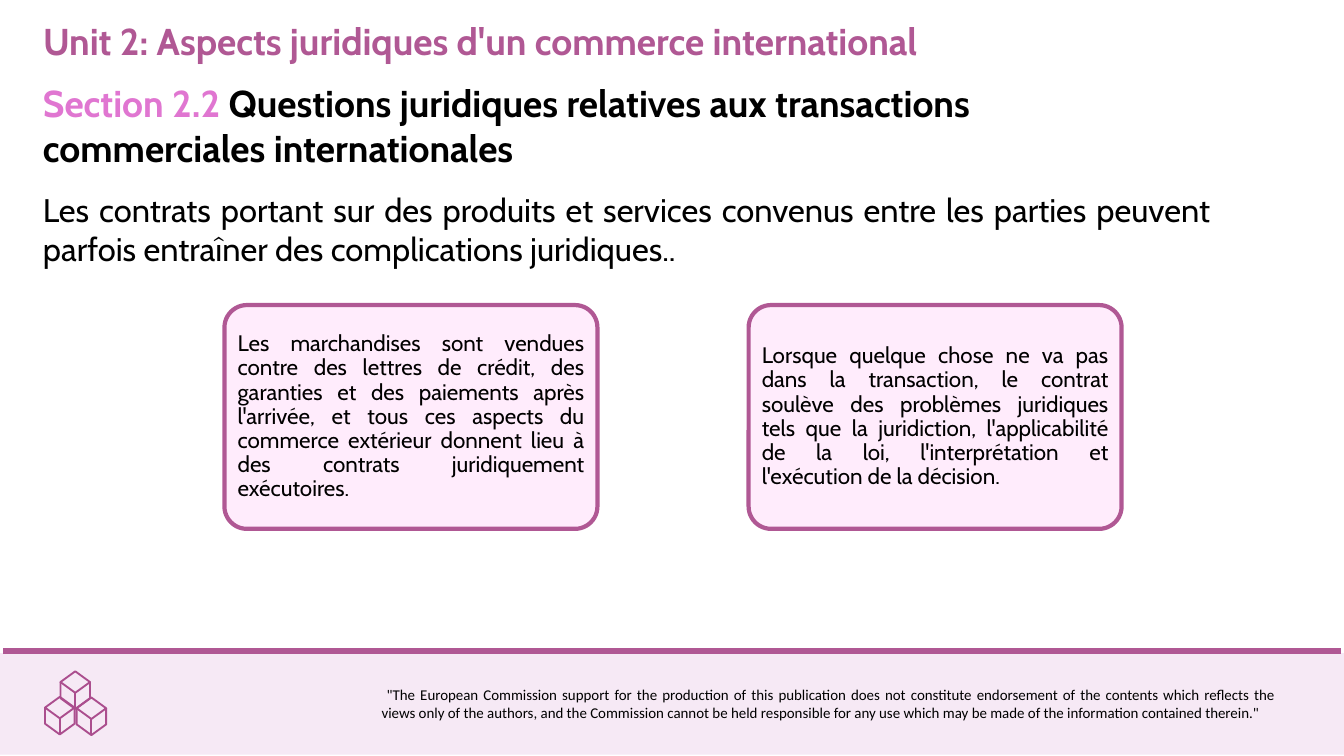
from dataclasses import dataclass

from lxml.etree import SubElement
from pptx import Presentation
from pptx.dml.color import RGBColor
from pptx.enum.shapes import MSO_CONNECTOR as Connector, MSO_SHAPE as Shape
from pptx.enum.text import MSO_ANCHOR as Anchor, MSO_AUTO_SIZE as AutoSize, PP_ALIGN as Align
from pptx.oxml.ns import qn
from pptx.util import Inches, Pt


@dataclass(frozen=True)
class Theme:
    plum: str = "B05894"
    icon: str = "AB4E8E"
    pink: str = "E076D1"
    card: str = "FFECFC"
    footer: str = "F6E9F5"
    ink: str = "000000"
    font: str = "Cabin"
    footer_font: str = "Calibri"
    heading_size: float = 40
    body_size: float = 35
    card_size: float = 24
    footer_size: float = 16


THEME = Theme()


def rgb(value):
    return RGBColor.from_string(value)


def write(frame, text, size, color=THEME.ink, font=THEME.font, bold=False,
          align=Align.LEFT, anchor=Anchor.TOP, spacing=None):
    """Append one formatted run to the first paragraph of a text frame."""
    frame.word_wrap = True
    frame.auto_size = AutoSize.NONE
    frame.vertical_anchor = anchor
    paragraph = frame.paragraphs[0]
    paragraph.alignment = align
    if spacing:
        paragraph.line_spacing = spacing
    run = paragraph.add_run()
    run.text = text
    run.font.name, run.font.size, run.font.bold = font, Pt(size), bold
    run.font.color.rgb = rgb(color)


class SlideBuilder:
    def __init__(self, slide, theme):
        self.slide, self.shapes, self.theme = slide, slide.shapes, theme

    def title(self, text, left, top, width, height):
        title = self.shapes.title
        title.left, title.top = Inches(left), Inches(top)
        title.width, title.height = Inches(width), Inches(height)
        write(title.text_frame, text, self.theme.heading_size,
              color=self.theme.plum, bold=True)

    def text_box(self, left, top, width, height):
        return self.shapes.add_textbox(
            Inches(left), Inches(top), Inches(width), Inches(height)).text_frame

    def panel(self, kind, left, top, width, height, fill, line=None, weight=0):
        panel = self.shapes.add_shape(
            kind, Inches(left), Inches(top), Inches(width), Inches(height))
        panel.shadow.inherit = False
        panel.fill.solid()
        panel.fill.fore_color.rgb = rgb(fill)
        if line:
            panel.line.color.rgb = rgb(line)
            panel.line.width = Pt(weight)
        else:
            panel.line.fill.background()
        return panel

    def card(self, text, left, top, width, height):
        card = self.panel(Shape.ROUNDED_RECTANGLE, left, top, width, height,
                          self.theme.card, self.theme.plum, 4.5)
        card.adjustments[0] = 0.1
        frame = card.text_frame
        frame.margin_left = frame.margin_right = Inches(0.1)
        frame.margin_top = frame.margin_bottom = Inches(0.1)
        write(frame, text, self.theme.card_size, align=Align.JUSTIFY,
              anchor=Anchor.MIDDLE, spacing=0.9)

    def rule(self, left, right, y, weight):
        rule = self.shapes.add_connector(
            Connector.STRAIGHT, Inches(left), Inches(y), Inches(right), Inches(y))
        rule.line.color.rgb = rgb(self.theme.plum)
        rule.line.width = Pt(weight)
        SubElement(rule._element.spPr, qn("a:effectLst"))

    def cube(self, center_x, center_y):
        def at(dx, dy):
            return Inches(center_x + dx), Inches(center_y + dy)

        top, middle, bottom = at(0, -0.28), at(0, 0.04), at(0, 0.28)
        left, right = at(-0.22, -0.12), at(0.22, -0.12)
        low_left, low_right = at(-0.22, 0.12), at(0.22, 0.12)

        # Top face, then the two side faces, then the front edge
        pen = self.shapes.build_freeform(*left)
        pen.add_line_segments([top, right, middle], close=True)
        pen.move_to(*left)
        pen.add_line_segments([low_left, bottom, low_right, right], close=False)
        pen.move_to(*middle)
        pen.add_line_segments([bottom], close=False)
        cube = pen.convert_to_shape()
        cube.shadow.inherit = False
        cube.fill.background()
        cube.line.color.rgb = rgb(self.theme.icon)
        cube.line.width = Pt(2)


def main():
    deck = Presentation()
    deck.slide_width, deck.slide_height = Inches(20), Inches(11.25)
    page = SlideBuilder(deck.slides.add_slide(deck.slide_layouts[5]), THEME)

    # Footer band with its rule, cube icon and disclaimer
    page.panel(Shape.RECTANGLE, 0, 9.72, 20, 1.51, THEME.footer)
    page.rule(0.05, 19.95, 9.69, 6.75)
    for center in [(0.89, 10.65), (1.12, 10.27), (1.36, 10.66)]:
        page.cube(*center)
    write(page.text_box(5.58, 10.15, 13.5, 0.64),
          " \"The European Commission support for the production of this publication "
          "does not constitute endorsement of the contents which reflects the views "
          "only of the authors, and the Commission cannot be held responsible for any "
          "use which may be made of the information contained therein.\"",
          THEME.footer_size, font=THEME.footer_font, align=Align.JUSTIFY)

    # Unit title, section heading and introduction
    page.title("Unit 2: Aspects juridiques d'un commerce international",
               0.54, 0.22, 15.62, 0.77)
    section = page.text_box(0.54, 1.14, 16.29, 1.45)
    write(section, "Section 2.2 ", THEME.heading_size, color=THEME.pink, bold=True)
    write(section, "Questions juridiques relatives aux transactions commerciales "
          "internationales", THEME.heading_size, bold=True)
    write(page.text_box(0.54, 2.77, 17.58, 3.55),
          "Les contrats portant sur des produits et services convenus entre les "
          "parties peuvent parfois entraîner des complications juridiques..",
          THEME.body_size, align=Align.JUSTIFY)

    # Two cards, side by side
    complications = [
        "Les marchandises sont vendues contre des lettres de crédit, des garanties et "
        "des paiements après l'arrivée, et tous ces aspects du commerce extérieur "
        "donnent lieu à des contrats juridiquement exécutoires.",
        "Lorsque quelque chose ne va pas dans la transaction, le contrat soulève des "
        "problèmes juridiques tels que la juridiction, l'applicabilité de la loi, "
        "l'interprétation et l'exécution de la décision.",
    ]
    for column, complication in enumerate(complications):
        page.card(complication, 3.34 + column * 7.8, 4.54, 5.55, 3.33)

    deck.save("out.pptx")


if __name__ == "__main__":
    main()
